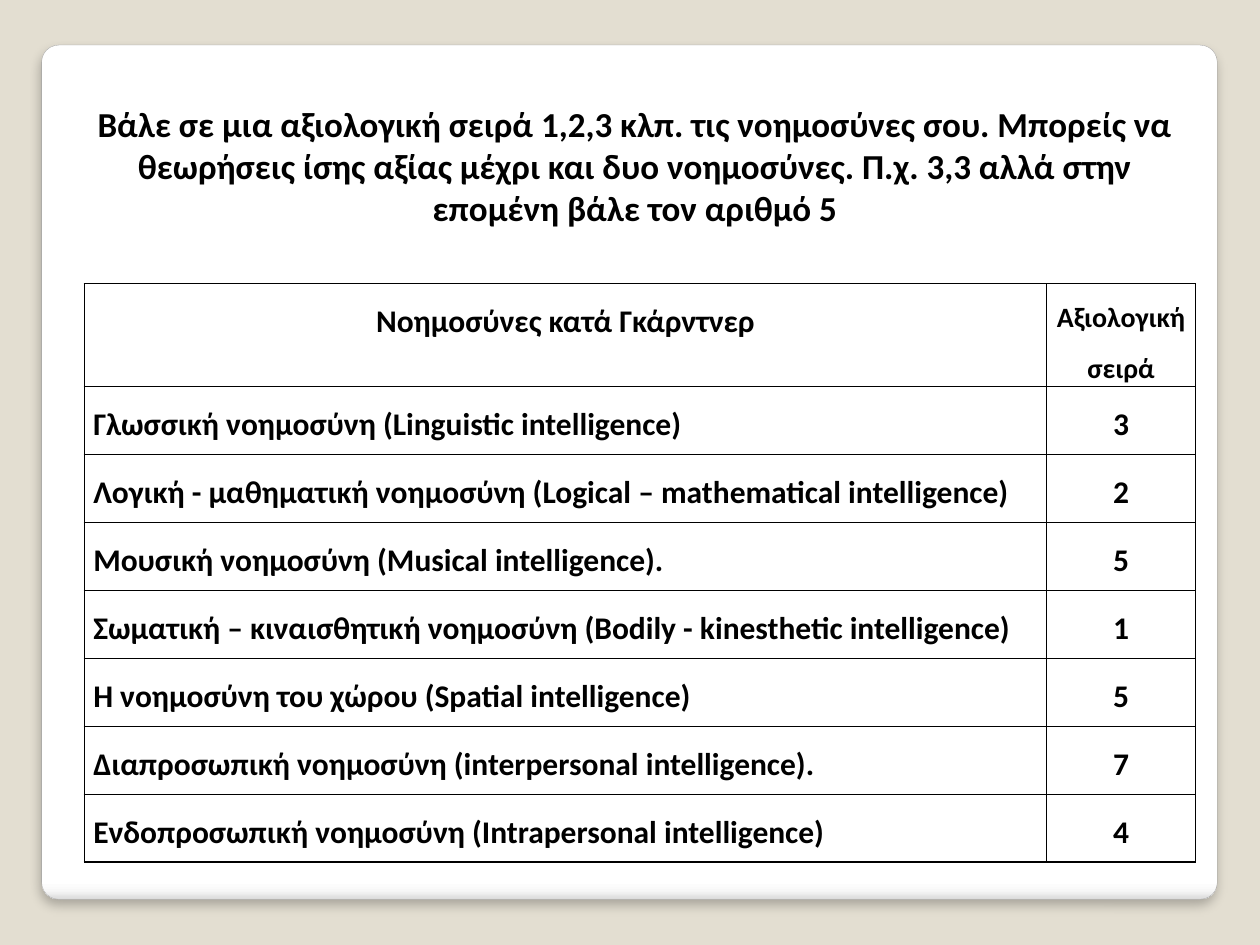
from lxml.etree import SubElement, fromstring
from pptx import Presentation
from pptx.dml.color import RGBColor
from pptx.enum.shapes import MSO_SHAPE
from pptx.enum.text import MSO_ANCHOR, PP_ALIGN
from pptx.oxml.ns import qn
from pptx.util import Cm, Pt

TITLE = ("Βάλε σε μια αξιολογική σειρά 1,2,3 κλπ. τις νοημοσύνες σου. "
         "Μπορείς να θεωρήσεις ίσης αξίας μέχρι και δυο νοημοσύνες. "
         "Π.χ. 3,3 αλλά στην επομένη βάλε τον αριθμό 5")
HEADER = ("Νοημοσύνες κατά Γκάρντνερ", "Αξιολογική σειρά")
RANKING = [
    ("Γλωσσική νοημοσύνη (Linguistic intelligence)", 3),
    ("Λογική - μαθηματική νοημοσύνη (Logical – mathematical intelligence)", 2),
    ("Μουσική νοημοσύνη (Musical intelligence).", 5),
    ("Σωματική – κιναισθητική νοημοσύνη (Bodily - kinesthetic intelligence)", 1),
    ("Η νοημοσύνη του χώρου (Spatial intelligence)", 5),
    ("Διαπροσωπική νοημοσύνη (interpersonal intelligence).", 7),
    ("Ενδοπροσωπική νοημοσύνη (Intrapersonal intelligence)", 4),
]

FONT = "Calibri"
BLACK = RGBColor(0x00, 0x00, 0x00)
SAND = RGBColor(0xE3, 0xDE, 0xD1)
GREY = RGBColor(0xA4, 0xA4, 0xA4)
CARD_STOPS = [(0, "FFFFFF"), (98, "FFFFFF"), (99, "F7F7F7"), (100, "DADADA")]
NAMESPACE = 'xmlns:a="http://schemas.openxmlformats.org/drawingml/2006/main"'

COLUMN_WIDTHS = (Cm(19.4), Cm(3))
HEADER_HEIGHT, ROW_HEIGHT = Cm(2.06), Cm(1.37)


def write_text(frame, text, size=18, align=PP_ALIGN.LEFT, spacing=1.0):
    """Fill a text frame with one bold paragraph."""
    frame.word_wrap = True
    paragraph = frame.paragraphs[0]
    paragraph.alignment = align
    paragraph.line_spacing = spacing
    run = paragraph.add_run()
    run.text = text
    run.font.name = FONT
    run.font.size = Pt(size)
    run.font.bold = True
    run.font.color.rgb = BLACK


def add_card(slide):
    """Draw the rounded white panel with its gradient edge and soft shadow."""
    card = slide.shapes.add_shape(MSO_SHAPE.ROUNDED_RECTANGLE,
                                  Cm(0.84), Cm(0.91), Cm(23.7), Cm(17.22))
    card.adjustments[0] = 0.02
    card.fill.background()
    card.line.color.rgb = GREY
    card.line.width = Pt(0.16)
    card.shadow.inherit = False
    properties = card.element.spPr
    stops = "".join(f'<a:gs pos="{percent * 1000}"><a:srgbClr val="{color}"/></a:gs>'
                    for percent, color in CARD_STOPS)
    gradient = fromstring(f'<a:gradFill {NAMESPACE}><a:gsLst>{stops}</a:gsLst>'
                          '<a:lin ang="5400000" scaled="0"/></a:gradFill>')
    properties.replace(properties.find(qn("a:noFill")), gradient)
    shadow = fromstring(
        f'<a:outerShdw {NAMESPACE} blurRad="{Pt(6)}" dist="{Pt(4)}" dir="5400000" '
        'rotWithShape="0"><a:srgbClr val="000000"><a:alpha val="25000"/>'
        '</a:srgbClr></a:outerShdw>')
    properties.find(qn("a:effectLst")).append(shadow)
    return card


def set_borders(cell):
    """Give a cell a thin black line on all four sides."""
    properties = cell._tc.get_or_add_tcPr()
    for index, side in enumerate(("lnL", "lnR", "lnT", "lnB")):
        line = properties.makeelement(qn(f"a:{side}"), {"w": str(Pt(1))})
        fill = SubElement(line, qn("a:solidFill"))
        SubElement(fill, qn("a:srgbClr"), val=str(BLACK))
        properties.insert(index, line)


def add_ranking_table(slide):
    """Add the table of intelligences and their rank."""
    rows = [HEADER, *RANKING]
    height = HEADER_HEIGHT + ROW_HEIGHT * len(RANKING)
    table = slide.shapes.add_table(len(rows), len(HEADER), Cm(1.7), Cm(5.72),
                                   sum(COLUMN_WIDTHS), height).table
    table.horz_banding = False
    table.first_row = False
    for column, width in zip(table.columns, COLUMN_WIDTHS):
        column.width = width
    for row_index, values in enumerate(rows):
        is_header = row_index == 0
        table.rows[row_index].height = HEADER_HEIGHT if is_header else ROW_HEIGHT
        for column_index, value in enumerate(values):
            cell = table.cell(row_index, column_index)
            cell.margin_left = cell.margin_right = Cm(0.18)
            cell.margin_top = cell.margin_bottom = 0
            cell.fill.background()
            set_borders(cell)
            centred = is_header or column_index == 1
            write_text(cell.text_frame, str(value), spacing=1.5,
                       size=16 if is_header and column_index == 1 else 18,
                       align=PP_ALIGN.CENTER if centred else PP_ALIGN.LEFT)


presentation = Presentation()
presentation.slide_width, presentation.slide_height = Cm(25.4), Cm(19.05)
slide = presentation.slides.add_slide(presentation.slide_layouts[5])
slide.background.fill.solid()
slide.background.fill.fore_color.rgb = SAND

title = slide.shapes.title
title.left, title.top, title.width, title.height = Cm(1.7), Cm(1.93), Cm(22.2), Cm(2.82)
title.text_frame.vertical_anchor = MSO_ANCHOR.MIDDLE
write_text(title.text_frame, TITLE, size=20, align=PP_ALIGN.CENTER)

card = add_card(slide)
title.element.addprevious(card.element)
add_ranking_table(slide)

presentation.save("out.pptx")
